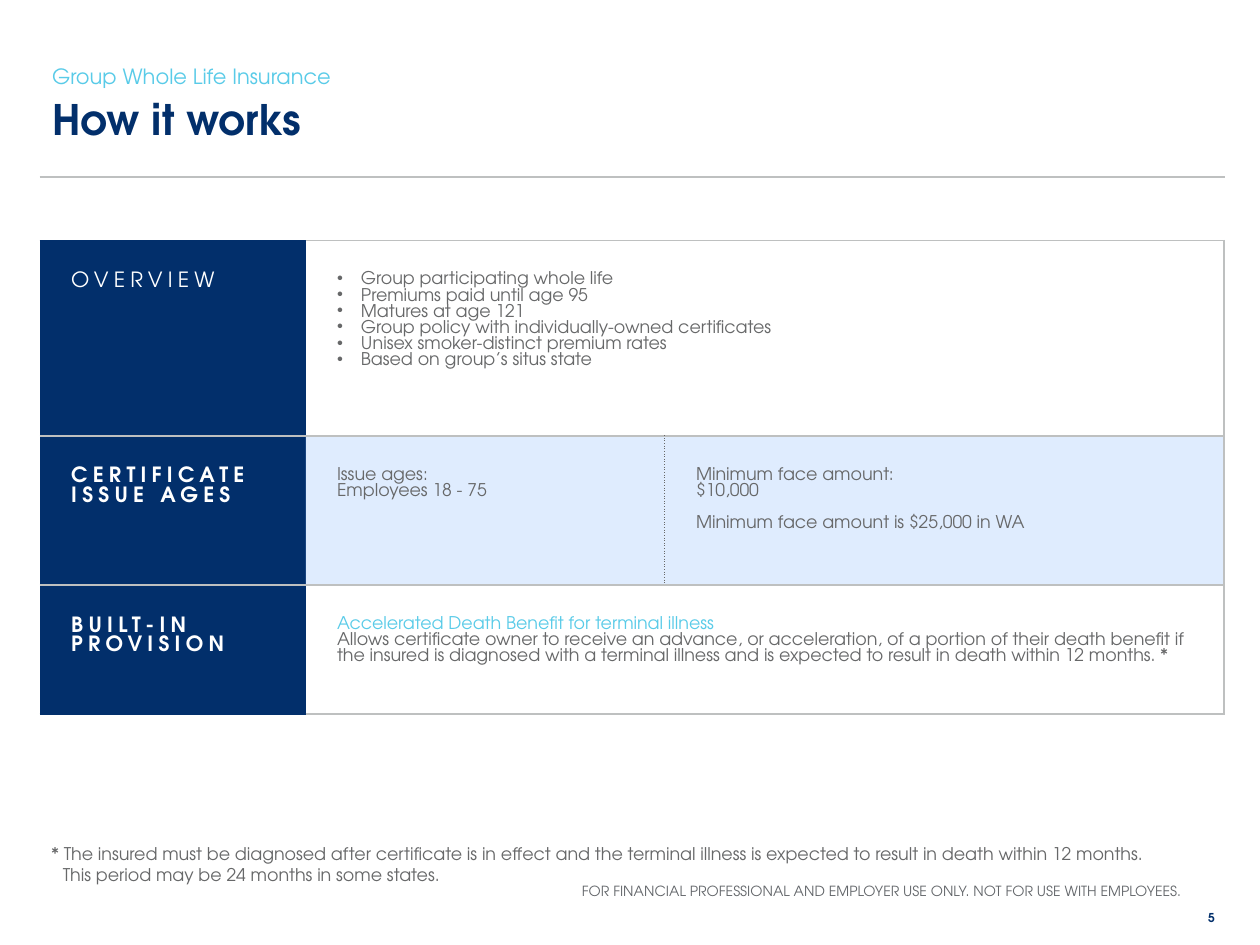
from copy import deepcopy

from lxml.etree import SubElement
from pptx import Presentation
from pptx.dml.color import RGBColor
from pptx.enum.shapes import MSO_CONNECTOR
from pptx.enum.text import MSO_ANCHOR, PP_ALIGN
from pptx.oxml.ns import qn
from pptx.util import Inches, Pt

COLORS = {
    "navy": "022F6B", "sky": "59CBE8", "rule": "BEC0C0", "pale": "B0D1FE",
    "text": "676869", "footer": "63666A", "white": "FFFFFF",
}
FONT = "TeX Gyre Adventor"
PLAIN_TABLE = "{2D5ABB26-0587-4C30-8999-92F81FD0307C}"
LEFT = 3.15

# Formats for text spans
BODY = {"size": 10, "color": "text"}
ACCENT = {"size": 10, "color": "sky"}
LABEL = {"size": 12, "color": "white", "spacing": 3}
BOLD_LABEL = {**LABEL, "bold": True}
KICKER = {"size": 12, "color": "sky"}
TITLE = {"size": 24, "color": "navy", "bold": True}
FOOTER = {"size": 8, "color": "footer"}
NUMBER = {"size": 7, "color": "navy", "bold": True}


def color(name):
    return RGBColor.from_string(COLORS[name])


def para_of(*spans, **layout):
    """A paragraph: (text, format) spans and its layout options."""
    return {"spans": spans, **layout}


class SlideStyle:
    """Draws on one page; lengths are cells of a 100 x 75 grid."""

    CELL = Inches(0.1)

    def __init__(self, deck):
        self.page = deck.slides.add_slide(deck.slide_layouts[6])

    def grid(self, *lengths):
        return [round(length * self.CELL) for length in lengths]

    def add_span(self, para, text, style):
        for index, line in enumerate(text.split("\n")):
            if index:
                para.add_line_break()
            span = para.add_run()
            span.text = line
            values = {"name": FONT, "size": Pt(style["size"]), "bold": style.get("bold", False)}
            for name, value in values.items():
                setattr(span.font, name, value)
            span.font.color.rgb = color(style["color"])
            properties = span.font._element
            if "spacing" in style:
                properties.set("spc", str(style["spacing"] * 100))
            if index:
                span._r.getprevious().append(deepcopy(properties))

    def fill_text(self, frame, paras):
        for index, content in enumerate(paras):
            para = frame.add_paragraph() if index else frame.paragraphs[0]
            properties = para._p.get_or_add_pPr()
            if content.get("bullet"):
                indent = Inches(0.19)
                properties.set("marL", str(indent))
                properties.set("indent", str(-indent))
                SubElement(properties, qn("a:buChar"), char="•")
            if "tab" in content:
                tabs = SubElement(properties, qn("a:tabLst"))
                SubElement(tabs, qn("a:tab"), pos=str(Inches(content["tab"])), algn="l")
            para.alignment = content.get("align", PP_ALIGN.LEFT)
            para.space_before = Pt(content.get("before", 0))
            for text, style in content["spans"]:
                self.add_span(para, text, style)

    def text(self, area, paras, anchor=MSO_ANCHOR.TOP, wrap=True):
        box = self.page.shapes.add_textbox(*self.grid(*area))
        box.text_frame.word_wrap = wrap
        box.text_frame.vertical_anchor = anchor
        self.fill_text(box.text_frame, paras)

    def rule(self, left, right, row):
        line = self.page.shapes.add_connector(
            MSO_CONNECTOR.STRAIGHT, *self.grid(left, row, right, row))
        line.line.color.rgb = color("rule")
        line.line.width = Pt(1)
        SubElement(line._element.spPr, qn("a:effectLst"))

    def border(self, cell, sides):
        """Sides maps L, R, T, B to (colour, dash)."""
        for side in "LRTB":
            if side in sides:
                name, dash = sides[side]
                line = SubElement(cell._tc.get_or_add_tcPr(), qn("a:ln" + side), w=str(Pt(1)))
                fill = SubElement(line, qn("a:solidFill"))
                SubElement(fill, qn("a:srgbClr"), val=COLORS[name])
                SubElement(line, qn("a:prstDash"), val=dash)

    def cell(self, cell, paras, fill, sides, alpha=None):
        margins = {"margin_left": 0.25, "margin_top": 0.25,
                   "margin_right": 0.1, "margin_bottom": 0.05}
        for name, inches in margins.items():
            setattr(cell, name, Inches(inches))
        self.border(cell, sides)
        cell.fill.solid()
        cell.fill.fore_color.rgb = color(fill)
        if alpha:
            shade = cell._tc.tcPr.find(qn("a:solidFill"))[0]
            SubElement(shade, qn("a:alpha"), val=str(alpha * 1000))
        self.fill_text(cell.text_frame, paras)

    def table(self, left, top, columns, rows):
        frame = self.page.shapes.add_table(
            len(rows), len(columns), *self.grid(left, top, sum(columns), sum(rows)))
        table = frame.table
        table.first_row = table.horz_banding = False
        table._tbl.tblPr.find(qn("a:tableStyleId")).text = PLAIN_TABLE
        for column, width in zip(table.columns, self.grid(*columns)):
            column.width = width
        for row, height in zip(table.rows, self.grid(*rows)):
            row.height = height
        return table


def main():
    deck = Presentation()
    deck.slide_width, deck.slide_height = Inches(10), Inches(7.5)
    style = SlideStyle(deck)

    # Heading
    style.rule(LEFT, 97.2, 14.04)
    style.text((LEFT, 2.5, 94, 9.8), [para_of(
        ("Group Whole Life Insurance", KICKER), (" \nHow it works", TITLE))], MSO_ANCHOR.MIDDLE)

    # Table frame and row labels
    table = style.table(LEFT, 19.1, (21.1, 28.5, 44.4), (15.5, 11.84, 10.24))
    gray, navy, dots = ("rule", "solid"), ("navy", "solid"), ("text", "dot")
    labels = [
        ("OVERVIEW", LABEL, navy, gray),
        ("CERTIFICATE \nISSUE AGES", BOLD_LABEL, gray, gray),
        ("BUILT-IN \nPROVISION", BOLD_LABEL, gray, navy),
    ]
    for row, (text, label, above, below) in enumerate(labels):
        style.cell(table.cell(row, 0), [para_of((text, label))], "navy", {"T": above, "B": below})

    # Wide cells: overview and provision
    overview = [
        "Group participating whole life",
        "Premiums paid until age 95",
        "Matures at age 121",
        "Group policy with individually-owned certificates",
        "Unisex smoker-distinct premium rates",
        "Based on group’s situs state",
    ]
    provision = [
        para_of(("Accelerated Death Benefit for terminal illness", ACCENT)),
        para_of(("Allows certificate owner to receive an advance, or acceleration, of a portion of "
                 "their death benefit if the insured is diagnosed with a terminal illness and is "
                 "expected to result in death within 12 months. *", BODY)),
    ]
    edges = {"T": gray, "B": gray}
    wide = {0: [para_of((item, BODY), bullet=True) for item in overview], 2: provision}
    for row, paras in wide.items():
        table.cell(row, 1).merge(table.cell(row, 2))
        for column in (1, 2):
            style.cell(table.cell(row, column), paras if column == 1 else [],
                       "white", {**edges, "R": gray})

    # Issue ages and face amounts
    ages = [para_of((line, BODY)) for line in ("Issue ages:", "Employees 18 - 75")]
    amounts = [para_of((line, BODY)) for line in ("Minimum face amount:", "$10,000")]
    amounts.append(para_of(("Minimum face amount is $25,000 in WA", BODY), before=9.2))
    style.cell(table.cell(1, 1), ages, "pale", {**edges, "R": dots}, alpha=40)
    style.cell(table.cell(1, 2), amounts, "pale", {**edges, "L": dots, "R": gray}, alpha=40)

    # Footnote, disclaimer and page number
    style.text((3.1, 66.32, 92.8, 4.4), [
        para_of(("* The insured must be diagnosed after certificate is in effect and the terminal "
                 "illness is expected to result in death within 12 months.", BODY)),
        para_of(("\tThis period may be 24 months in some states.", BODY), tab=0.09),
    ], MSO_ANCHOR.BOTTOM)
    style.text((45.2, 69.52, 50.7, 2.4), [para_of((
        "FOR FINANCIAL PROFESSIONAL AND EMPLOYER USE ONLY. NOT FOR USE WITH EMPLOYEES.",
        FOOTER))], wrap=False)
    style.text((94.4, 71.76, 3.5, 3.2), [para_of(("5", NUMBER), align=PP_ALIGN.CENTER)])

    deck.save("out.pptx")


if __name__ == "__main__":
    main()
